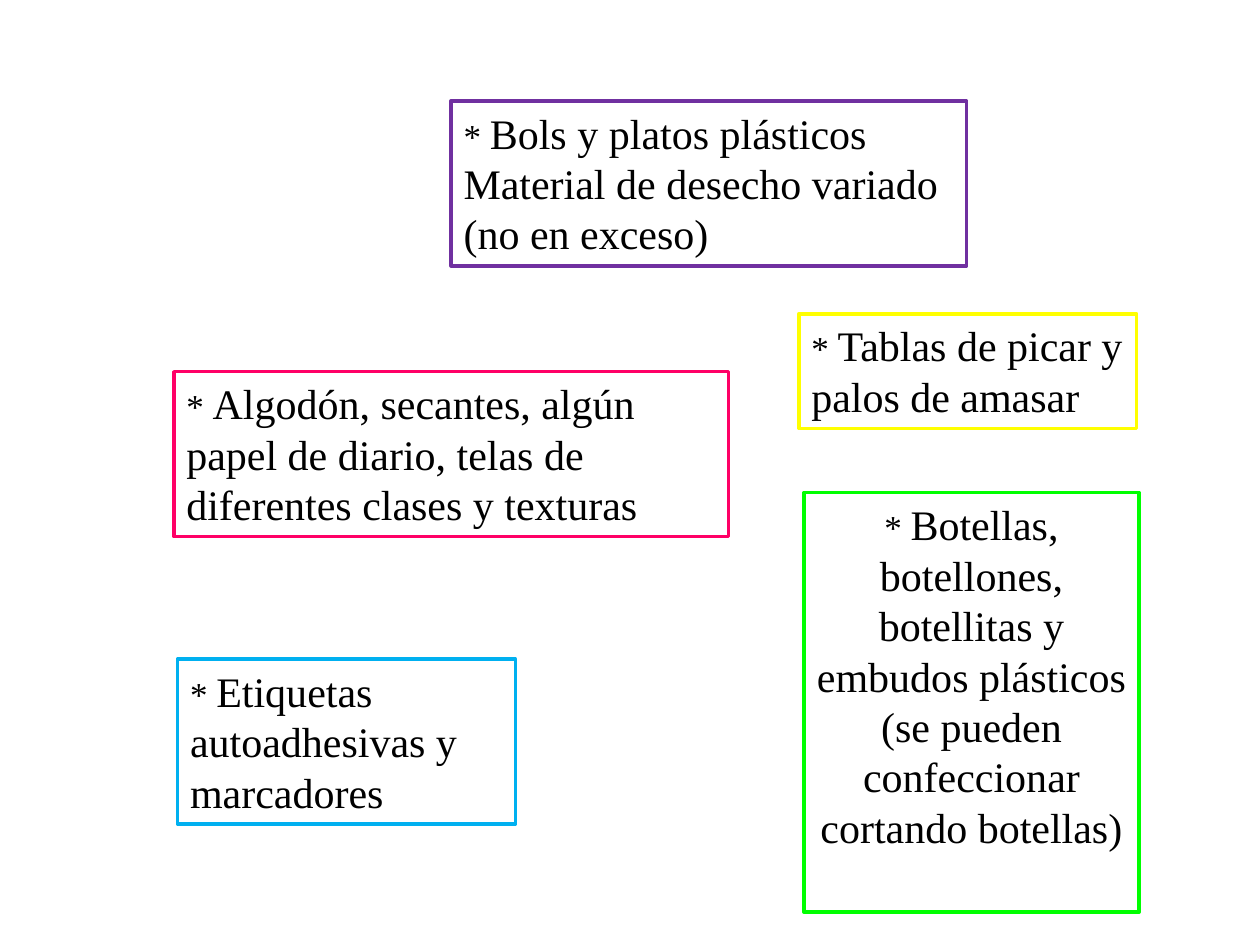
from pptx import Presentation
from pptx.dml.color import RGBColor
from pptx.enum import shapes, text
from pptx.util import Pt

FONT = "Times New Roman"
BLACK = RGBColor(0x00, 0x00, 0x00)
WHITE = RGBColor(0xFF, 0xFF, 0xFF)
PINK = RGBColor(0xFF, 0x00, 0x66)
YELLOW = RGBColor(0xFF, 0xFF, 0x00)
GREEN = RGBColor(0x00, 0xFF, 0x00)
PURPLE = RGBColor(0x70, 0x30, 0xA0)
BLUE = RGBColor(0x00, 0xB0, 0xF0)

LEFT, CENTER = text.PP_ALIGN.LEFT, text.PP_ALIGN.CENTER

# (left, top, width, height) in points, border colour, alignment, paragraphs
MATERIALS = [
    ((99.4, 212.4, 316.8, 94.3), PINK, LEFT,
     ["Algodón, secantes, algún papel de diario, telas de diferentes clases y texturas"]),
    ((456.5, 179.3, 193, 65.5), YELLOW, LEFT,
     ["Tablas de picar y palos de amasar"]),
    ((459.4, 281.5, 191.5, 239.8), GREEN, CENTER,
     ["Botellas, botellones, botellitas y embudos plásticos (se pueden confeccionar cortando botellas)"]),
    ((257.8, 57.6, 294.5, 94.3), PURPLE, LEFT,
     ["Bols y platos plásticos", "Material de desecho variado (no en exceso)"]),
    ((101.5, 376.6, 193, 94.3), BLUE, LEFT,
     ["Etiquetas autoadhesivas y marcadores"]),
]


def add_material(slide, box, border, alignment, lines):
    """Add a bordered box whose first line opens with a smaller asterisk."""
    card = slide.shapes.add_shape(shapes.MSO_SHAPE.RECTANGLE, *map(Pt, box))
    card.shadow.inherit = False
    card.fill.solid()
    card.fill.fore_color.rgb = WHITE
    card.line.color.rgb = border
    card.line.width = Pt(2)

    frame = card.text_frame
    frame.word_wrap = True
    frame.auto_size = text.MSO_AUTO_SIZE.SHAPE_TO_FIT_TEXT
    frame.vertical_anchor = text.MSO_ANCHOR.TOP
    for index, line in enumerate(lines):
        paragraph = frame.add_paragraph() if index else frame.paragraphs[0]
        paragraph.alignment = alignment
        paragraph.font.name = FONT
        paragraph.font.size = Pt(24)
        paragraph.font.color.rgb = BLACK
        if index == 0:
            asterisk = paragraph.add_run()
            asterisk.text = "* "
            asterisk.font.size = Pt(20)
        paragraph.add_run().text = line


def main():
    deck = Presentation()
    deck.slide_width, deck.slide_height = Pt(720), Pt(540)
    slide = deck.slides.add_slide(deck.slide_layouts[6])
    for material in MATERIALS:
        add_material(slide, *material)
    deck.save("out.pptx")


if __name__ == "__main__":
    main()
